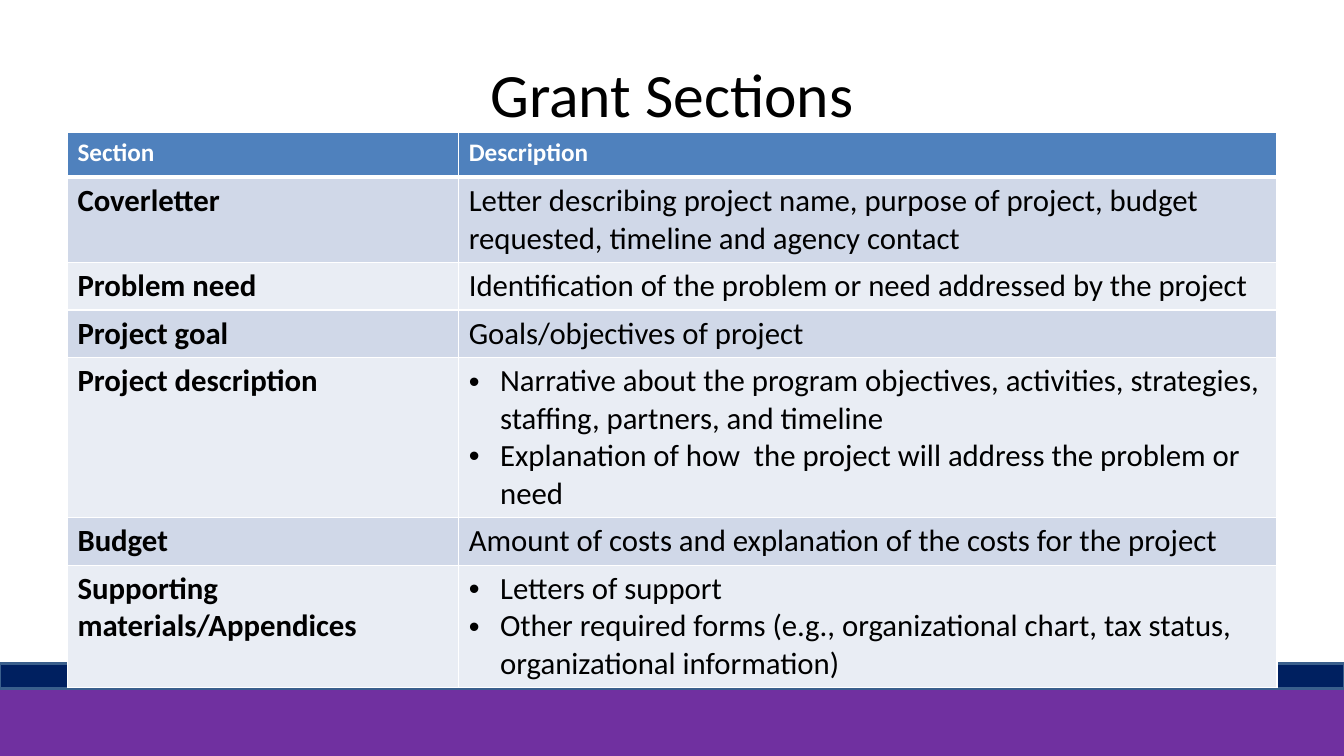
from dataclasses import dataclass

from pptx import Presentation
from pptx.dml.color import RGBColor
from pptx.enum.shapes import MSO_SHAPE
from pptx.enum.text import MSO_ANCHOR, PP_ALIGN
from pptx.oxml import parse_xml
from pptx.oxml.ns import nsdecls
from pptx.util import Cm, Pt


@dataclass(frozen=True)
class Theme:
    font: str = "Calibri"
    title_size: int = 44
    header_size: int = 18
    body_size: int = 22
    text: str = "000000"
    white: str = "FFFFFF"
    header: str = "4F81BD"
    bands: tuple = ("D0D8E8", "E9EDF4")
    purple: str = "7030A0"
    navy: str = "002060"
    navy_line: str = "3A5F8C"


THEME = Theme()
WIDTH, HEIGHT = Cm(33.87), Cm(19.05)
FOOTER_TOP = Cm(16.71)
COLUMN_WIDTHS = (9.86, 20.62)
ROW_HEIGHTS = (1.14, 1.96, 1.14, 1.14, 2.79, 1.14, 2.79)
HEADINGS = ("Section", "Description")

# A tuple of descriptions becomes a bulleted list.
SECTIONS = (
    ("Coverletter", "Letter describing project name, purpose of project, "
                    "budget requested, timeline and agency contact"),
    ("Problem need", "Identification of the problem or need addressed by the project"),
    ("Project goal", "Goals/objectives of project"),
    ("Project description", (
        "Narrative about the program objectives, activities, strategies, "
        "staffing, partners, and timeline",
        "Explanation of how  the project will address the problem or need")),
    ("Budget", "Amount of costs and explanation of the costs for the project"),
    ("Supporting materials/Appendices", (
        "Letters of support",
        "Other required forms (e.g., organizational chart, tax status, "
        "organizational information)")),
)


def write(p, text, size, color, bold=False):
    r = p.add_run()
    r.text = text
    formats = {"name": THEME.font, "size": Pt(size), "bold": bold}
    for name, value in formats.items():
        setattr(r.font, name, value)
    r.font.color.rgb = RGBColor.from_string(color)


def add_band(s, height, fill, line):
    """Draw a full-width bar at the top of the footer."""
    band = s.shapes.add_shape(MSO_SHAPE.RECTANGLE, 0, FOOTER_TOP, WIDTH, height)
    band.shadow.inherit = False
    band.fill.solid()
    band.fill.fore_color.rgb = RGBColor.from_string(fill)
    band.line.color.rgb = RGBColor.from_string(line)
    band.line.width = Pt(2)


def set_title(s, text):
    title = s.shapes.title
    box = {"left": Cm(1.7), "top": Cm(0.76), "width": Cm(30.48), "height": Cm(3.18)}
    for name, value in box.items():
        setattr(title, name, value)
    tf = title.text_frame
    tf.vertical_anchor = MSO_ANCHOR.MIDDLE
    p = tf.paragraphs[0]
    p.alignment = PP_ALIGN.CENTER
    write(p, text, THEME.title_size, THEME.text)


def add_bullet(p):
    pPr = p._p.get_or_add_pPr()
    pPr.set("marL", str(Cm(0.79)))
    pPr.set("indent", str(-Cm(0.79)))
    pPr.append(parse_xml(f'<a:buFont {nsdecls("a")} typeface="Arial"/>'))
    pPr.append(parse_xml(f'<a:buChar {nsdecls("a")} char="•"/>'))


def style_cell(cell, fill, top=1, bottom=1):
    """Set white borders, with top and bottom widths in points, and the fill."""
    tcPr = cell._tc.get_or_add_tcPr()
    for side, width in {"L": 1, "R": 1, "T": top, "B": bottom}.items():
        tcPr.append(parse_xml(
            f'<a:ln{side} {nsdecls("a")} w="{Pt(width)}"><a:solidFill>'
            f'<a:srgbClr val="{THEME.white}"/></a:solidFill></a:ln{side}>'))
    cell.fill.solid()
    cell.fill.fore_color.rgb = RGBColor.from_string(fill)


def fill_cell(cell, content, size, color, bold):
    tf = cell.text_frame
    bulleted = isinstance(content, tuple)
    for i, text in enumerate(content if bulleted else (content,)):
        p = tf.add_paragraph() if i else tf.paragraphs[0]
        if bulleted:
            add_bullet(p)
        write(p, text, size, color, bold)


def add_sections_table(s):
    rows = (HEADINGS,) + SECTIONS
    table = s.shapes.add_table(
        len(rows), len(HEADINGS), Cm(1.7), Cm(3.33),
        Cm(sum(COLUMN_WIDTHS)), Cm(sum(ROW_HEIGHTS))).table
    for column, width in zip(table.columns, COLUMN_WIDTHS):
        column.width = Cm(width)
    for i, (row, height, contents) in enumerate(zip(table.rows, ROW_HEIGHTS, rows)):
        row.height = Cm(height)
        header = i == 0
        fill = THEME.header if header else THEME.bands[(i - 1) % 2]
        size = THEME.header_size if header else THEME.body_size
        color = THEME.white if header else THEME.text
        for j, (cell, content) in enumerate(zip(row.cells, contents)):
            style_cell(cell, fill, top=3 if i == 1 else 1, bottom=3 if header else 1)
            fill_cell(cell, content, size, color, bold=header or j == 0)


def main():
    prs = Presentation()
    prs.slide_width, prs.slide_height = WIDTH, HEIGHT
    s = prs.slides.add_slide(prs.slide_layouts[5])
    add_band(s, HEIGHT - FOOTER_TOP, THEME.purple, THEME.purple)
    add_band(s, Cm(0.64), THEME.navy, THEME.navy_line)
    set_title(s, "Grant Sections")
    add_sections_table(s)
    prs.save("out.pptx")


if __name__ == "__main__":
    main()
